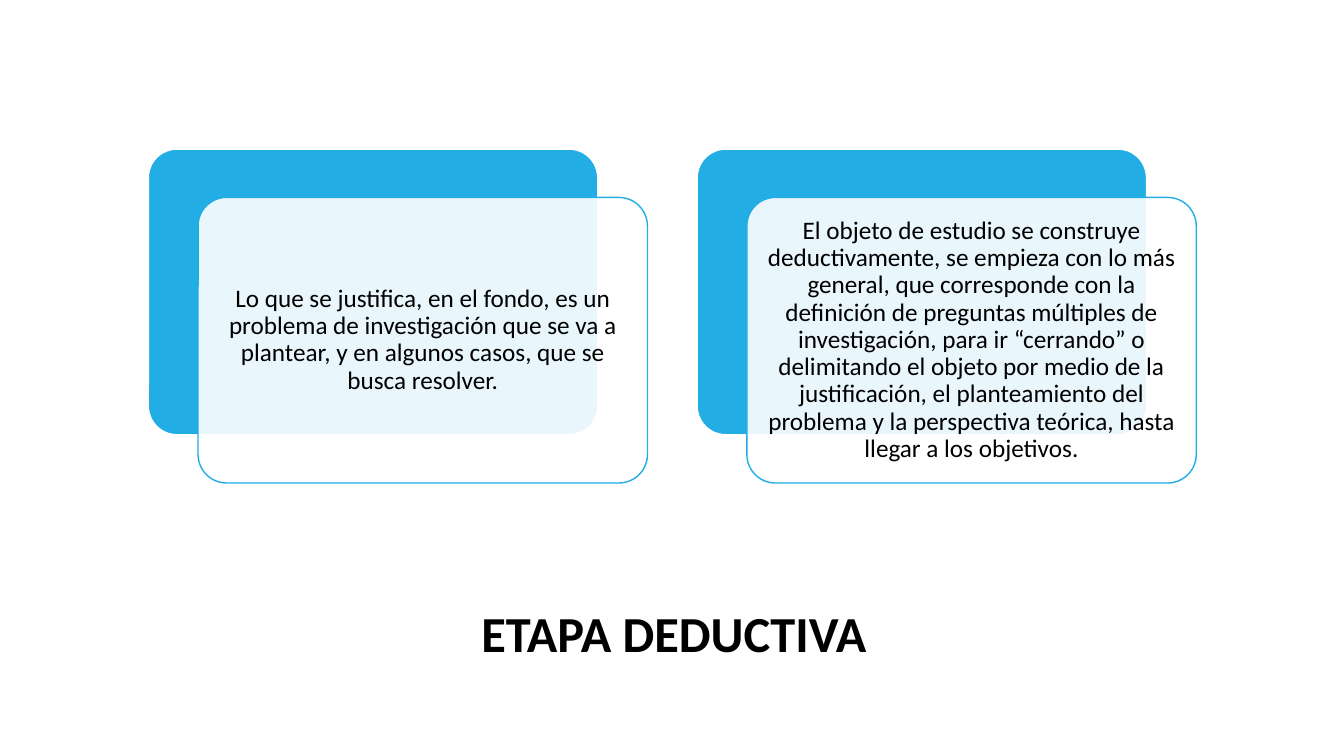
from pptx import Presentation
from pptx.dml.color import RGBColor
from pptx.enum.shapes import MSO_SHAPE
from pptx.enum.text import MSO_ANCHOR, MSO_AUTO_SIZE, PP_ALIGN
from pptx.oxml.ns import qn
from pptx.util import Pt
from lxml import etree

ROUNDED = MSO_SHAPE.ROUNDED_RECTANGLE
MIDDLE = MSO_ANCHOR.MIDDLE
NO_AUTOFIT = MSO_AUTO_SIZE.NONE
CENTER = PP_ALIGN.CENTER

BLUE = RGBColor(0x22, 0xAD, 0xE4)
WHITE = RGBColor(0xFF, 0xFF, 0xFF)
BLACK = RGBColor(0x00, 0x00, 0x00)

TITLE = "ETAPA DEDUCTIVA"
IDEAS = [
    "Lo que se justifica, en el fondo, es un problema de investigación que se va a "
    "plantear, y en algunos casos, que se busca resolver.",
    "El objeto de estudio se construye deductivamente, se empieza con lo más general, "
    "que corresponde con la definición de preguntas múltiples de investigación, para ir "
    "“cerrando” o delimitando el objeto por medio de la justificación, el planteamiento "
    "del problema y la perspectiva teórica, hasta llegar a los objetivos.",
]

# Card geometry in points
CARD_LEFT, CARD_TOP = 106, 106.5
CARD_WIDTH, CARD_HEIGHT = 321, 204
CARD_PITCH = 392
FRONT_SHIFT_X, FRONT_SHIFT_Y = 35.5, 34.5


class SlideBuilder:
    """Style and drawing methods for one slide; lengths in points."""

    font = "Calibri"

    def __init__(self, slide):
        self.slide = slide

    def set_text(self, frame, text, size, bold=False):
        frame.text = text
        frame.word_wrap = True
        frame.auto_size = NO_AUTOFIT
        frame.vertical_anchor = MIDDLE
        paragraph = frame.paragraphs[0]
        paragraph.alignment = CENTER
        paragraph.line_spacing = 0.9
        font = paragraph.runs[0].font
        font.name, font.size, font.bold = self.font, Pt(size), bold
        font.color.rgb = BLACK

    def title(self, text, left, top, width, height):
        heading = self.slide.shapes.title
        heading.left, heading.top = Pt(left), Pt(top)
        heading.width, heading.height = Pt(width), Pt(height)
        self.set_text(heading.text_frame, text, 36, bold=True)

    def panel(self, left, top, fill, line, opacity=100):
        panel = self.slide.shapes.add_shape(
            ROUNDED, Pt(left), Pt(top), Pt(CARD_WIDTH), Pt(CARD_HEIGHT))
        panel.adjustments[0] = 0.1
        panel.shadow.inherit = False
        panel.fill.solid()
        panel.fill.fore_color.rgb = fill
        panel.line.color.rgb = line
        panel.line.width = Pt(1)
        if opacity < 100:
            color = panel.element.spPr.find(qn("a:solidFill"))[0]
            etree.SubElement(color, qn("a:alpha")).set("val", str(opacity * 1000))
        return panel

    def card(self, text, left, top):
        self.panel(left, top, BLUE, WHITE)
        front = self.panel(left + FRONT_SHIFT_X, top + FRONT_SHIFT_Y, WHITE, BLUE, 90)
        frame = front.text_frame
        frame.margin_left = frame.margin_right = Pt(5)
        frame.margin_top = frame.margin_bottom = Pt(5)
        self.set_text(frame, text, 18)


def main():
    prs = Presentation()
    prs.slide_width, prs.slide_height = Pt(960), Pt(540)
    builder = SlideBuilder(prs.slides.add_slide(prs.slide_layouts[5]))

    # Heading below the cards
    builder.title(TITLE, 117.5, 409.5, 728, 89.5)

    # One card per idea
    for column, idea in enumerate(IDEAS):
        builder.card(idea, CARD_LEFT + column * CARD_PITCH, CARD_TOP)

    prs.save("out.pptx")


if __name__ == "__main__":
    main()
